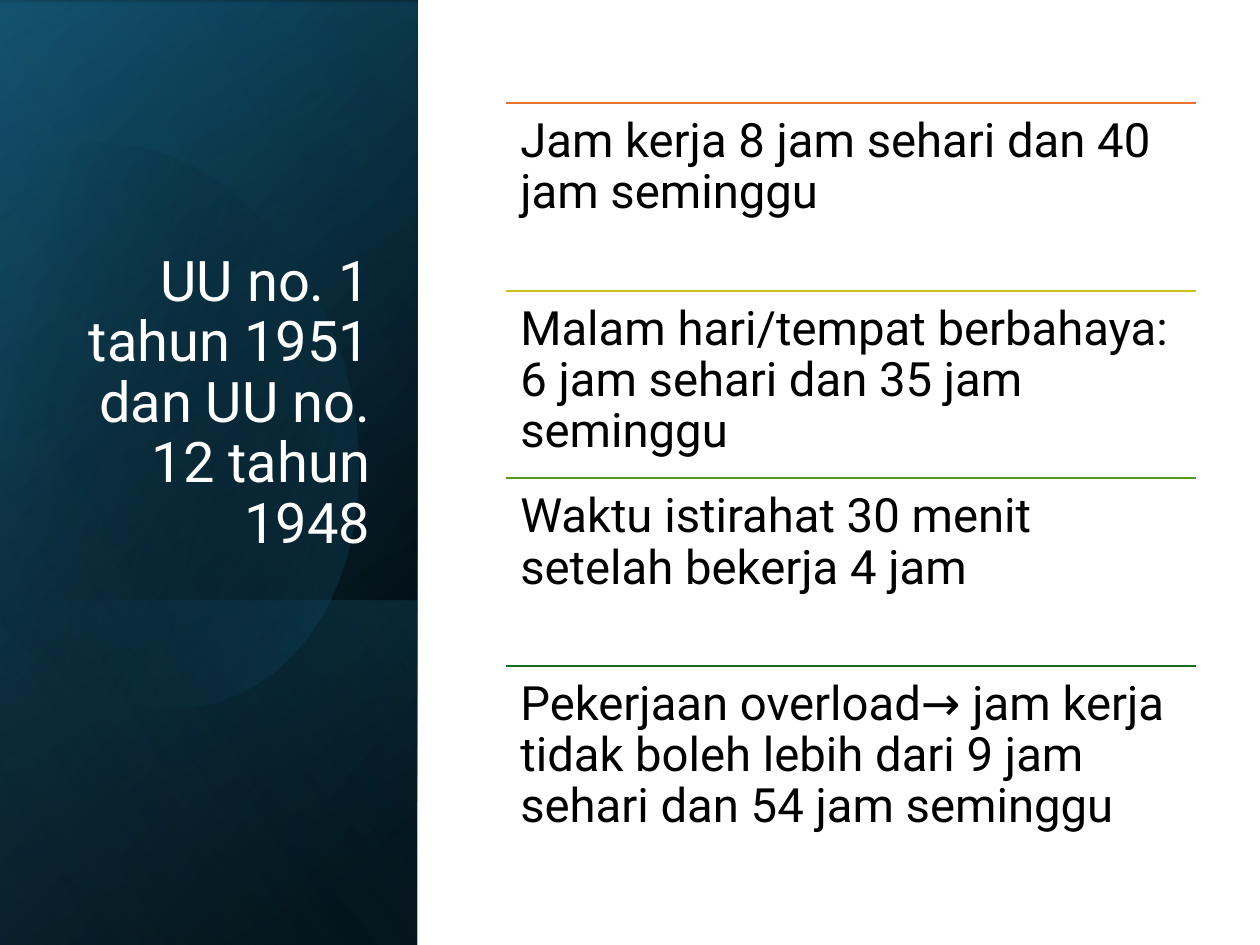
import math
from dataclasses import dataclass

import pptx
import pptx.util
from pptx.dml.color import RGBColor
from pptx.enum.shapes import MSO_CONNECTOR, MSO_SHAPE
from pptx.enum.text import MSO_ANCHOR, MSO_AUTO_SIZE, PP_ALIGN
from pptx.oxml.ns import qn
from pptx.oxml.xmlchemy import OxmlElement
from pptx.util import Cm


@dataclass(frozen=True)
class Theme:
    font: str = "Roboto"
    title_size: int = 32
    rule_size: int = 27
    title_color: str = "FFFFFF"
    text_color: str = "000000"
    dark: str = "000000"
    navy: str = "104862"
    teal: str = "156082"
    sky: str = "46B1E1"


THEME = Theme()

TITLE = "UU no. 1 tahun 1951 dan UU no. 12 tahun 1948"
WORK_RULES = [
    ("Jam kerja 8 jam sehari dan 40 jam seminggu", "E97132"),
    ("Malam hari/tempat berbahaya: 6 jam sehari dan 35 jam seminggu", "CBC11E"),
    ("Waktu istirahat 30 menit setelah bekerja 4 jam", "56991D"),
    ("Pekerjaan overload→ jam kerja tidak boleh lebih dari 9 jam sehari "
     "dan 54 jam seminggu", "196B24"),
]

PANEL_WIDTH, PANEL_HEIGHT = 8.41, 19.05
RULE_LEFT, RULE_TOP, RULE_WIDTH, RULE_HEIGHT = 10.21, 2.08, 13.89, 3.78

# Outline of the glow as seen on the slide, in cm: cubic curves, then a polyline
GLOW_CENTER = (3.02, 8.5)
GLOW_ROTATION = 343.9
GLOW_RIGHT_CURVES = [
    [(2.44, 2.9), (4.34, 3.1), (6.2, 4.88), (6.93, 7.37)],
    [(6.93, 7.37), (7.8, 10.46), (6.65, 13.49), (4.34, 14.15)],
    [(4.34, 14.15), (2.9, 14.58), (1.35, 13.97), (0.18, 12.7)],
]
GLOW_LEFT_EDGE = [(-0.08, 12.4), (-0.64, 4.22), (-0.38, 3.91)]
GLOW_TOP_CURVES = [
    [(-0.38, 3.91), (0.05, 3.48), (0.56, 3.18), (1.14, 3)],
    [(1.14, 3), (1.57, 2.87), (2.01, 2.84), (2.44, 2.9)],
]


def set_gradient(shape, stops, angle):
    """Fill with two (position %, colour, opacity %) stops, angle clockwise."""
    shape.shadow.inherit = False
    shape.line.fill.background()
    shape.fill.gradient()
    shape.fill.gradient_angle = 360 - angle
    for stop, (position, color, _) in zip(shape.fill.gradient_stops, stops):
        stop.position = position / 100
        stop.color.rgb = RGBColor.from_string(color)
    colors = shape.element.spPr.iter(qn("a:srgbClr"))
    for color_element, (_, _, opacity) in zip(list(colors), stops):
        alpha = OxmlElement("a:alpha")
        alpha.set("val", str(opacity * 1000))
        color_element.append(alpha)


def add_panel_layer(slide, top, height, stops, angle):
    """Add a mirrored rectangle turned a quarter, as wide as the side panel."""
    left = (PANEL_WIDTH - height) / 2
    turned_top = top + (height - PANEL_WIDTH) / 2
    layer = slide.shapes.add_shape(
        MSO_SHAPE.RECTANGLE, Cm(left), Cm(turned_top), Cm(height), Cm(PANEL_WIDTH))
    layer.rotation = 90
    layer.element.spPr.find(qn("a:xfrm")).set("flipH", "1")
    set_gradient(layer, stops, angle)


def sample_curve(start, control_1, control_2, end, steps=16):
    points = []
    for step in range(1, steps + 1):
        t = step / steps
        weights = ((1 - t) ** 3, 3 * t * (1 - t) ** 2, 3 * t * t * (1 - t), t ** 3)
        corners = (start, control_1, control_2, end)
        points.append(tuple(
            sum(weight * corner[axis] for weight, corner in zip(weights, corners))
            for axis in (0, 1)))
    return points


def turn_back(point):
    """Undo the glow's rotation, which is set on the finished shape."""
    angle = math.radians(-GLOW_ROTATION)
    x, y = point[0] - GLOW_CENTER[0], point[1] - GLOW_CENTER[1]
    return (Cm(GLOW_CENTER[0] + x * math.cos(angle) - y * math.sin(angle)),
            Cm(GLOW_CENTER[1] + x * math.sin(angle) + y * math.cos(angle)))


def add_glow(slide, stops, angle):
    outline = [GLOW_RIGHT_CURVES[0][0]]
    for curve in GLOW_RIGHT_CURVES:
        outline += sample_curve(*curve)
    outline += GLOW_LEFT_EDGE
    for curve in GLOW_TOP_CURVES:
        outline += sample_curve(*curve)
    vertices = [turn_back(point) for point in outline]
    builder = slide.shapes.build_freeform(*vertices[0])
    builder.add_line_segments(vertices[1:], close=True)
    glow = builder.convert_to_shape()
    glow.rotation = GLOW_ROTATION
    set_gradient(glow, stops, angle)


def write_text(frame, text, size, color, align):
    frame.word_wrap = True
    frame.auto_size = MSO_AUTO_SIZE.NONE
    paragraph = frame.paragraphs[0]
    paragraph.text = text
    paragraph.alignment = align
    paragraph.line_spacing = 0.9
    paragraph.font.name = THEME.font
    paragraph.font.size = pptx.util.Pt(size)
    paragraph.font.color.rgb = RGBColor.from_string(color)


def place_title(slide):
    title = slide.shapes.title
    title.left, title.top = Cm(1.22), Cm(4.67)
    title.width, title.height = Cm(6.5), Cm(6.65)
    title.text_frame.vertical_anchor = MSO_ANCHOR.BOTTOM
    write_text(title.text_frame, TITLE, THEME.title_size, THEME.title_color,
               PP_ALIGN.RIGHT)
    # Bring the title in front of the panel
    slide.shapes.element.append(title.element)


def add_work_rule(slide, top, text, color):
    divider = slide.shapes.add_connector(
        MSO_CONNECTOR.STRAIGHT, Cm(RULE_LEFT), Cm(top),
        Cm(RULE_LEFT + RULE_WIDTH), Cm(top))
    divider.line.color.rgb = RGBColor.from_string(color)
    divider.line.width = pptx.util.Pt(1)
    divider.element.spPr.append(OxmlElement("a:effectLst"))

    rule = slide.shapes.add_textbox(
        Cm(RULE_LEFT), Cm(top), Cm(RULE_WIDTH), Cm(RULE_HEIGHT))
    frame = rule.text_frame
    frame.margin_left = frame.margin_right = Cm(0.28)
    frame.margin_top = frame.margin_bottom = Cm(0.28)
    write_text(frame, text, THEME.rule_size, THEME.text_color, PP_ALIGN.LEFT)


def main():
    presentation = pptx.Presentation()
    presentation.slide_width, presentation.slide_height = Cm(25.4), Cm(19.05)
    slide = presentation.slides.add_slide(presentation.slide_layouts[5])

    # Side panel, built up from dark to light
    add_panel_layer(slide, 0, PANEL_HEIGHT,
                    [(8, THEME.dark, 100), (100, THEME.navy, 100)], 50)
    add_panel_layer(slide, 0.05, PANEL_HEIGHT,
                    [(0, THEME.dark, 0), (99, THEME.teal, 46)], 30)
    add_panel_layer(slide, 12.1, 6.96,
                    [(2, THEME.teal, 29), (100, THEME.dark, 30)], 130)
    add_glow(slide, [(29, THEME.dark, 0), (100, THEME.teal, 43)], 30)
    add_panel_layer(slide, 0, PANEL_HEIGHT,
                    [(0, THEME.dark, 0), (99, THEME.sky, 11)], 120)
    place_title(slide)

    # Working-time rules
    for index, (text, color) in enumerate(WORK_RULES):
        add_work_rule(slide, RULE_TOP + index * RULE_HEIGHT, text, color)

    presentation.save("out.pptx")


if __name__ == "__main__":
    main()
